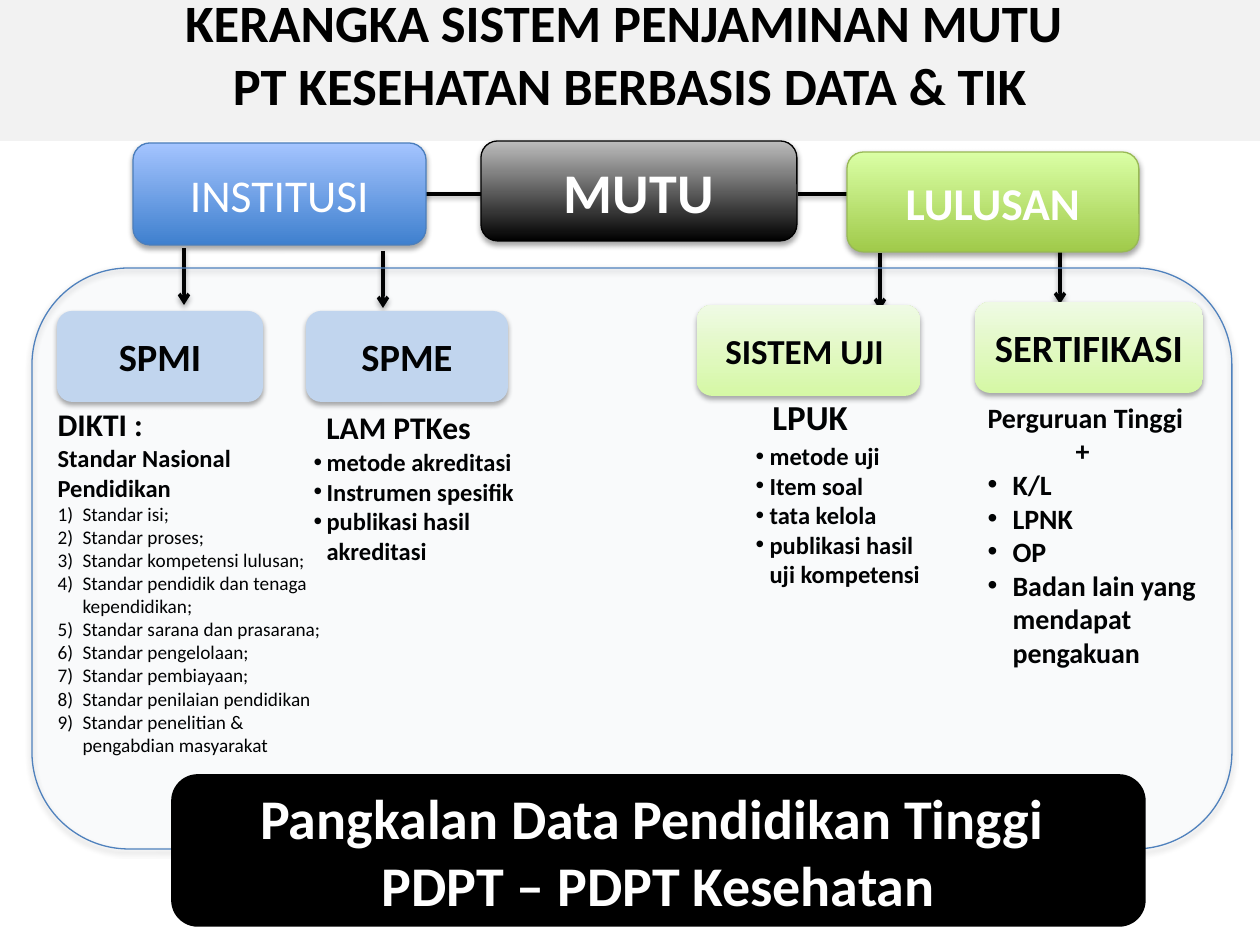
from dataclasses import dataclass
from typing import Optional

from lxml.etree import SubElement
from pptx import Presentation
from pptx.dml.color import RGBColor
from pptx.enum.shapes import MSO_CONNECTOR as Connector, MSO_SHAPE as Shape
from pptx.enum.text import MSO_ANCHOR as Anchor, MSO_AUTO_SIZE as AutoSize, PP_ALIGN as Align
from pptx.oxml.ns import qn
from pptx.util import Emu, Pt

SCALE = 914400 / 126


@dataclass(frozen=True)
class Theme:
    font: str = "Calibri"
    black: str = "000000"
    white: str = "FFFFFF"
    band: str = "F2F2F2"
    pale_blue: str = "C6D9F1"
    panel: str = "4F81BD"
    blue: tuple = ("3F80CE", "A4C4FF")
    blue_edge: str = "4B7EBC"
    green: tuple = ("A0CA4A", "DAFFA5")
    green_edge: str = "98B955"
    pale_green: tuple = ("DAFDA7", "F5FFE7")
    grey: tuple = ("000000", "BDBDBD")
    title: int = 30
    huge: int = 32
    large: int = 26
    label: int = 22
    heading: int = 20
    subheading: int = 18
    partner: int = 16
    body: int = 14
    small: int = 11


THEME = Theme()


@dataclass(frozen=True)
class Area:
    left: int
    top: int
    width: int
    height: int

    def emu(self) -> list:
        return [px(n) for n in (self.left, self.top, self.width, self.height)]


@dataclass(frozen=True)
class Para:
    text: str
    size: int
    color: str = THEME.black
    bold: bool = True
    align: Align = Align.LEFT
    bullet: str = ""
    margin: int = 0
    hanging: int = 0


@dataclass(frozen=True)
class Block:
    area: Area
    paras: tuple
    fill: object
    edge: Optional[str] = None
    edge_width: float = 0.75
    shadow: bool = True


@dataclass(frozen=True)
class Link:
    start: tuple
    end: tuple
    arrow: bool = False


def px(length: int) -> Emu:
    return Emu(round(length * SCALE))


def rgb(color: str) -> RGBColor:
    return RGBColor.from_string(color)


def centred(text: str, size: int, color: str = THEME.black, bold: bool = True) -> Para:
    return Para(text, size, color, bold, Align.CENTER)


def listed(texts: tuple, size: int, bullet: str, margin: int, hanging: int, bold: bool = True) -> tuple:
    return tuple(Para(text, size, bold=bold, bullet=bullet, margin=margin, hanging=hanging) for text in texts)


def add_shadow(effects, distance: int = 23000) -> None:
    shadow = SubElement(effects, qn("a:outerShdw"), blurRad="40000", dist=str(distance),
                        dir="5400000", rotWithShape="0")
    color = SubElement(shadow, qn("a:srgbClr"), val=THEME.black)
    SubElement(color, qn("a:alpha"), val="35000")


def set_bullet(properties, para: Para) -> None:
    properties.set("marL", str(px(para.margin)))
    properties.set("indent", str(px(-para.hanging)))
    if para.bullet == "number":
        SubElement(properties, qn("a:buFont"), typeface="+mj-lt")
        SubElement(properties, qn("a:buAutoNum"), type="arabicParenR")
    elif para.bullet:
        SubElement(properties, qn("a:buFont"), typeface="Arial")
        SubElement(properties, qn("a:buChar"), char=para.bullet)
    else:
        SubElement(properties, qn("a:buNone"))


def write(box, paras: tuple, anchor: Anchor = Anchor.TOP) -> None:
    frame = box.text_frame
    frame.word_wrap = True
    frame.auto_size = AutoSize.NONE
    frame.vertical_anchor = anchor
    for index, para in enumerate(paras):
        line = frame.paragraphs[0] if index == 0 else frame.add_paragraph()
        line.text = para.text
        line.alignment = para.align
        set_bullet(line._p.get_or_add_pPr(), para)
        line.space_before = Pt(0)
        line.font.name = THEME.font
        line.font.size = Pt(para.size)
        line.font.bold = para.bold
        line.font.color.rgb = rgb(para.color)


def fill_placeholder(box, area: Area, paras: tuple) -> None:
    box.left, box.top, box.width, box.height = area.emu()
    write(box, paras)


def add_block(page, block: Block):
    box = page.shapes.add_shape(Shape.ROUNDED_RECTANGLE, *block.area.emu())
    if isinstance(block.fill, tuple):
        box.fill.gradient()
        box.fill.gradient_angle = 90
        for stop, color in zip(box.fill.gradient_stops, block.fill):
            stop.color.rgb = rgb(color)
    else:
        box.fill.solid()
        box.fill.fore_color.rgb = rgb(block.fill)
    if block.edge:
        box.line.color.rgb = rgb(block.edge)
        box.line.width = Pt(block.edge_width)
    else:
        box.line.fill.background()
    box.shadow.inherit = False
    if block.shadow:
        add_shadow(box._element.spPr.find(qn("a:effectLst")))
    if block.paras:
        write(box, block.paras, Anchor.MIDDLE)
    return box


def add_link(page, link: Link) -> None:
    line = page.shapes.add_connector(Connector.STRAIGHT, *map(px, link.start + link.end))
    line.line.color.rgb = rgb(THEME.black)
    line.line.width = Pt(2)
    if link.arrow:
        SubElement(line.line._get_or_add_ln(), qn("a:tailEnd"), type="arrow")
    add_shadow(SubElement(line._element.spPr, qn("a:effectLst")), 20000)


def main() -> None:
    t = THEME
    deck = Presentation()
    deck.slide_width, deck.slide_height = px(1260), px(945)
    page = deck.slides.add_slide(deck.slide_layouts[4])

    title = page.shapes.title
    fill_placeholder(title, Area(0, -16, 1260, 157), (
        centred("KERANGKA SISTEM PENJAMINAN MUTU \vPT KESEHATAN BERBASIS DATA & TIK", t.title),))
    title.fill.solid()
    title.fill.fore_color.rgb = rgb(t.band)

    standards = ("Standar isi;", "Standar proses;", "Standar kompetensi lulusan;",
                 "Standar pendidik dan tenaga kependidikan;", "Standar sarana dan prasarana;",
                 "Standar pengelolaan;", "Standar pembiayaan;", "Standar penilaian pendidikan",
                 "Standar penelitian & pengabdian masyarakat")
    accreditation = ("metode akreditasi", "Instrumen spesifik", "publikasi hasil akreditasi")
    testing = ("metode uji", "Item soal", "tata kelola", "publikasi hasil uji kompetensi")
    partners = ("K/L", "LPNK", "OP", "Badan lain yang mendapat pengakuan")
    lists = (
        (Area(45, 399, 296, 426), (Para("DIKTI :", t.subheading), Para("Standar Nasional Pendidikan", t.body))
         + listed(standards, t.small, "number", 25, 25, False)),
        (Area(289, 441, 248, 131), listed(accreditation, t.body, "•", 25, 13)),
        (Area(718, 435, 234, 190), listed(testing, t.body, "•", 39, 14)),
        (Area(975, 394, 255, 285), (Para("Perguruan Tinggi", t.partner), Para("+", t.partner, margin=88))
         + listed(partners, t.partner, "•", 25, 25)),
    )
    for box, (area, paras) in zip(list(page.placeholders)[1:], lists):
        fill_placeholder(box, area, paras)

    for area, para in ((Area(314, 402, 194, 50), Para("LAM PTKes", t.subheading)),
                       (Area(760, 389, 194, 55), Para("LPUK", t.heading))):
        write(page.shapes.add_textbox(*area.emu()), (para,))

    for x, top in ((184, 248), (383, 251), (880, 253), (1060, 247)):
        add_link(page, Link((x, top), (x, top + 57), True))
    for x in (408, 798):
        add_link(page, Link((x, 194), (x + 76, 194)))

    for block in (
        Block(Area(481, 141, 316, 100), (centred("MUTU", t.huge, t.white),), t.grey, t.black),
        Block(Area(57, 311, 206, 91), (centred("SPMI", t.label),), t.pale_blue),
        Block(Area(306, 311, 202, 91), (centred("SPME", t.label),), t.pale_blue),
        Block(Area(697, 305, 223, 91), (centred("SISTEM UJI ", t.heading),), t.pale_green),
        Block(Area(975, 302, 228, 91), (centred("SERTIFIKASI", t.label),), t.pale_green),
        Block(Area(847, 152, 292, 100), (centred("LULUSAN", t.large, t.white),), t.green, t.green_edge),
        Block(Area(133, 143, 293, 102), (centred("INSTITUSI", t.large, t.white, False),), t.blue, t.blue_edge),
    ):
        add_block(page, block)

    panel = add_block(page, Block(Area(32, 268, 1200, 581), (), t.panel, t.panel))
    SubElement(panel._element.spPr.find(qn("a:solidFill"))[0], qn("a:alpha"), val="2000")

    add_block(page, Block(Area(173, 776, 971, 149), (
        centred("Pangkalan Data Pendidikan Tinggi ", t.huge, t.white),
        centred("PDPT – PDPT Kesehatan", t.huge, t.white),
    ), t.black, t.black, 2, False))

    deck.save("out.pptx")


if __name__ == "__main__":
    main()
